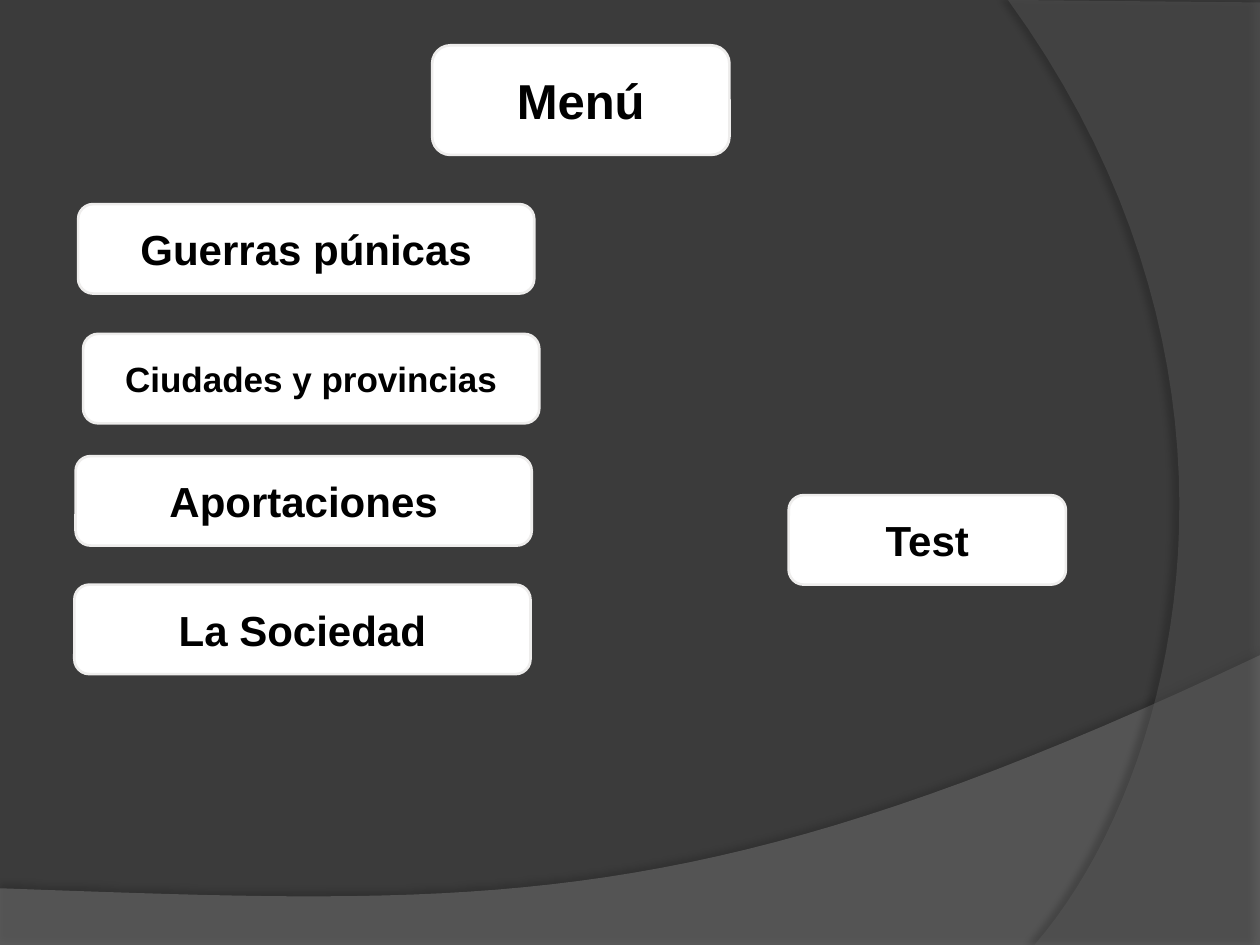
from lxml import etree
from pptx import Presentation
from pptx.dml.color import RGBColor
from pptx.enum.shapes import MSO_SHAPE
from pptx.enum.text import MSO_ANCHOR, PP_ALIGN
from pptx.oxml.ns import qn
from pptx.util import Inches, Pt

ROUNDED = MSO_SHAPE.ROUNDED_RECTANGLE
MIDDLE = MSO_ANCHOR.MIDDLE
CENTER = PP_ALIGN.CENTER

CHARCOAL = RGBColor(0x3B, 0x3B, 0x3B)
WAVE_GREY = RGBColor(0x7F, 0x7F, 0x7F)
ARC_GREY = RGBColor(0x5E, 0x5E, 0x5E)
WHITE = RGBColor(0xFF, 0xFF, 0xFF)
BORDER = RGBColor(0xEE, 0xED, 0xEC)
BLACK = RGBColor(0, 0, 0)

CURVE_STEPS = 40
BUTTON_HEIGHT = 0.71
MENU_WIDTH = 3.62
MENU_ITEMS = [
    ("Guerras púnicas", 0.62, 1.62, 24),
    ("Ciudades y provincias", 0.66, 2.65, 20),
    ("Aportaciones", 0.6, 3.62, 24),
    ("La Sociedad", 0.59, 4.64, 24),
]


def curve(*controls):
    """Return points along a cubic Bezier curve with four control points."""
    points = []
    for step in range(CURVE_STEPS + 1):
        t = step / CURVE_STEPS
        weights = ((1 - t) ** 3, 3 * t * (1 - t) ** 2, 3 * t**2 * (1 - t), t**3)
        points.append(tuple(
            sum(weight * control[axis] for weight, control in zip(weights, controls))
            for axis in (0, 1)
        ))
    return points


def add_alpha(color, percent):
    etree.SubElement(color, qn("a:alpha"), val=str(percent * 1000))


def add_shadow(shape, opacity, blur, distance, angle):
    shape.shadow.inherit = False
    effects = shape._element.spPr.find(qn("a:effectLst"))
    shadow = etree.SubElement(
        effects, qn("a:outerShdw"), blurRad=str(Pt(blur)), dist=str(Pt(distance)),
        dir=str(angle * 60000), algn="ctr", rotWithShape="0",
    )
    add_alpha(etree.SubElement(shadow, qn("a:srgbClr"), val=str(BLACK)), opacity)


def add_sweep(page, outline, color, opacity, shadow):
    """Draw a translucent, shadowed area inside the outline, given in inches."""
    start, *rest = [(Inches(x), Inches(y)) for x, y in outline]
    builder = page.shapes.build_freeform(*start, scale=1.0)
    builder.add_line_segments(rest, close=True)
    sweep = builder.convert_to_shape()
    sweep.fill.solid()
    sweep.fill.fore_color.rgb = color
    add_alpha(sweep._element.spPr.find(qn("a:solidFill"))[0], opacity)
    sweep.line.fill.background()
    add_shadow(sweep, *shadow)


def add_background(page):
    page.background.fill.solid()
    page.background.fill.fore_color.rgb = CHARCOAL
    wave = [(0, 7.05), (0, 7.51), (10, 7.51)]
    wave += curve((10, 5.2), (5.59, 7.29), (3.91, 7.19), (0, 7.05))
    add_sweep(page, wave, WAVE_GREY, 45, (35, 4, 3.5, 270))
    arc = [(10, 0.02), (10, 7.5)]
    arc += curve((8.21, 7.5), (9.35, 6.19), (10.18, 3), (8, 0))
    add_sweep(page, arc, ARC_GREY, 40, (45, 4, 4, 180))


def add_button(page, text, left, top, width, height=BUTTON_HEIGHT, size=24):
    box = page.shapes.add_shape(
        ROUNDED, Inches(left), Inches(top), Inches(width), Inches(height)
    )
    box.shadow.inherit = False
    box.fill.solid()
    box.fill.fore_color.rgb = WHITE
    box.line.color.rgb = BORDER
    box.line.width = Pt(1.5)
    box.text_frame.word_wrap = True
    box.text_frame.vertical_anchor = MIDDLE
    para = box.text_frame.paragraphs[0]
    para.text = text
    para.alignment = CENTER
    para.font.name = "Arial"
    para.font.size = Pt(size)
    para.font.bold = True
    para.font.color.rgb = BLACK


def main():
    deck = Presentation()
    deck.slide_width, deck.slide_height = Inches(10), Inches(7.5)
    page = deck.slides.add_slide(deck.slide_layouts[6])
    add_background(page)
    add_button(page, "Menú", 3.43, 0.36, 2.36, height=0.87, size=28)
    add_button(page, "Test", 6.26, 3.93, 2.2)
    for text, left, top, size in MENU_ITEMS:
        add_button(page, text, left, top, MENU_WIDTH, size=size)
    deck.save("out.pptx")


if __name__ == "__main__":
    main()
